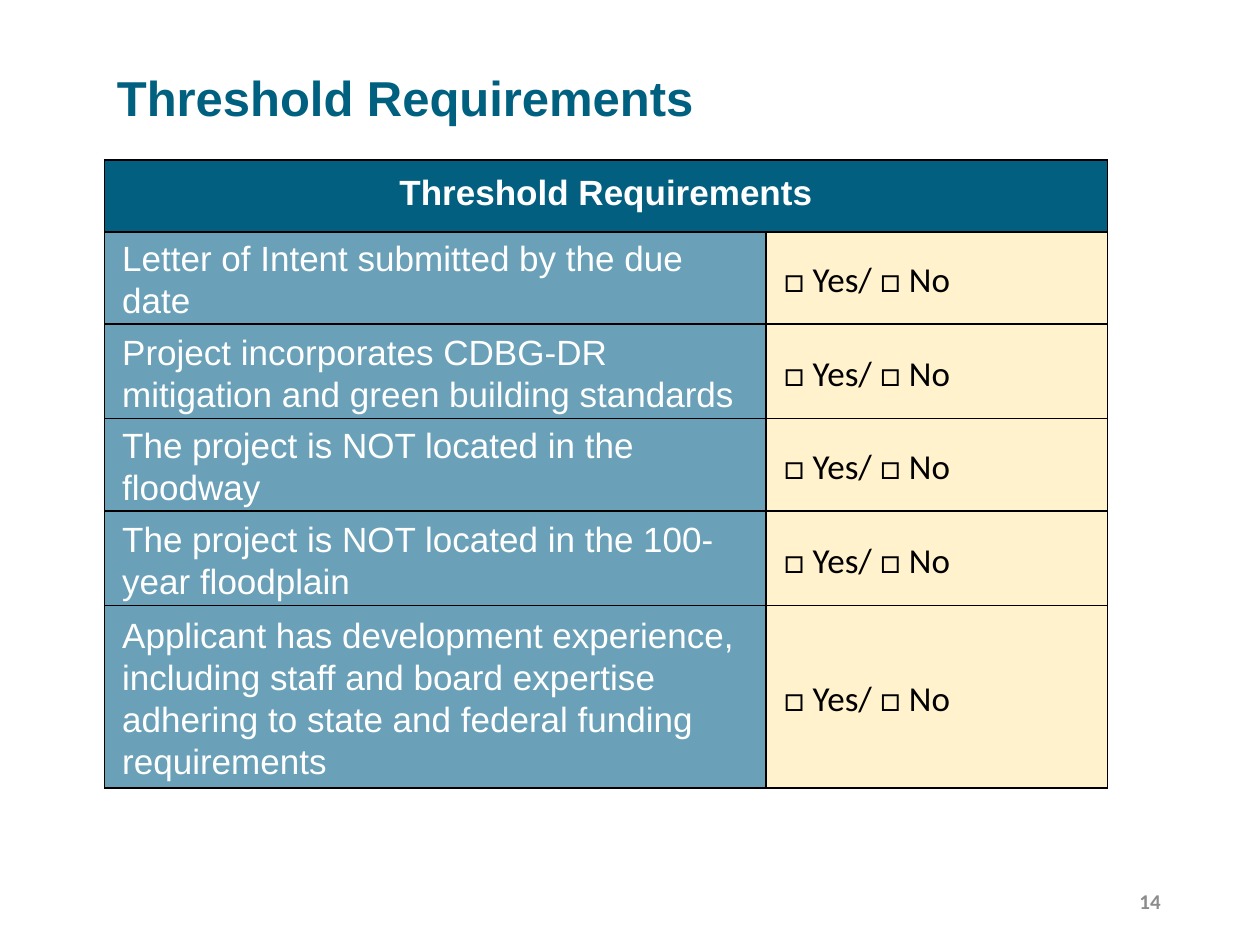
from pptx import Presentation
from pptx.dml.color import RGBColor
from pptx.enum.text import MSO_ANCHOR, PP_ALIGN
from pptx.oxml import parse_xml
from pptx.oxml.ns import nsdecls
from pptx.util import Inches, Pt

COLORS = {
    "title": "00607F", "header": "025F80", "requirement": "6AA1B8",
    "answer": "FFF2CC", "white": "FFFFFF", "black": "000000", "gray": "8C8C8C",
}

# Content
TITLE = "Threshold Requirements"
HEADER = "Threshold Requirements"
ANSWER = "□ Yes/ □ No"
PAGE_NUMBER = "14"
REQUIREMENTS = [  # text, row height
    ("Letter of Intent submitted by the due date", 0.42),
    ("Project incorporates CDBG-DR mitigation and green building standards", 0.75),
    ("The project is NOT located in the floodway", 0.42),
    ("The project is NOT located in the 100-year floodplain", 0.75),
    ("Applicant has development experience, including staff and board expertise "
     "adhering to state and federal funding requirements", 1.43),
]
HEADER_HEIGHT = 0.57
COLUMN_WIDTHS = [5.25, 2.71]
HEADER_MARGINS = (0.18, 0.09, 0.18, 0.09)
BODY_MARGINS = (0.14, 0.02, 0.14, 0)


def write_text(frame, text, *, size=20, font="Arial", color="white", bold=False,
               align=PP_ALIGN.LEFT, spacing=1.0):
    para = frame.paragraphs[0]
    para.alignment = align
    para.line_spacing = spacing
    span = para.add_run()
    span.text = text
    span.font.size = Pt(size)
    span.font.name = font
    span.font.bold = bold
    span.font.color.rgb = RGBColor.from_string(COLORS[color])


def add_text(page, text, left, top, width, height, **style):
    box = page.shapes.add_textbox(Inches(left), Inches(top), Inches(width), Inches(height))
    box.text_frame.word_wrap = True
    box.text_frame.vertical_anchor = MSO_ANCHOR.MIDDLE
    write_text(box.text_frame, text, **style)


def add_borders(cell):
    properties = cell._tc.get_or_add_tcPr()
    for index, side in enumerate(("lnL", "lnR", "lnT", "lnB")):
        properties.insert(index, parse_xml(
            f'<a:{side} {nsdecls("a")} w="{Pt(1)}"><a:solidFill>'
            f'<a:srgbClr val="{COLORS["black"]}"/></a:solidFill></a:{side}>'))


def fill_cell(cell, text, fill, margins, anchor=MSO_ANCHOR.MIDDLE, **style):
    cell.fill.solid()
    cell.fill.fore_color.rgb = RGBColor.from_string(COLORS[fill])
    (cell.margin_left, cell.margin_top,
     cell.margin_right, cell.margin_bottom) = map(Inches, margins)
    cell.vertical_anchor = anchor
    write_text(cell.text_frame, text, spacing=1.07, **style)


deck = Presentation()
deck.slide_width, deck.slide_height = Inches(10), Inches(7.5)
page = deck.slides.add_slide(deck.slide_layouts[6])

# Title and page number
add_text(page, TITLE, 0.83, 0.19, 8.35, 1.22, size=28, color="title", bold=True, spacing=0.9)
add_text(page, PAGE_NUMBER, 7.06, 6.95, 2.25, 0.4, size=12, font="Calibri",
         color="gray", bold=True, align=PP_ALIGN.RIGHT)

# Requirements table
heights = [HEADER_HEIGHT] + [height for _, height in REQUIREMENTS]
table = page.shapes.add_table(
    len(heights), len(COLUMN_WIDTHS), Inches(0.83), Inches(1.27),
    Inches(sum(COLUMN_WIDTHS)), Inches(sum(heights))).table
for column, width in zip(table.columns, COLUMN_WIDTHS):
    column.width = Inches(width)
for row, height in zip(table.rows, heights):
    row.height = Inches(height)
for cell in table.iter_cells():
    add_borders(cell)

table.cell(0, 0).merge(table.cell(0, 1))
fill_cell(table.cell(0, 0), HEADER, "header", HEADER_MARGINS, MSO_ANCHOR.TOP,
          bold=True, align=PP_ALIGN.CENTER)
for number, (requirement, _) in enumerate(REQUIREMENTS, start=1):
    fill_cell(table.cell(number, 0), requirement, "requirement", BODY_MARGINS)
    fill_cell(table.cell(number, 1), ANSWER, "answer", BODY_MARGINS,
              font="Calibri", color="black")

deck.save("out.pptx")
